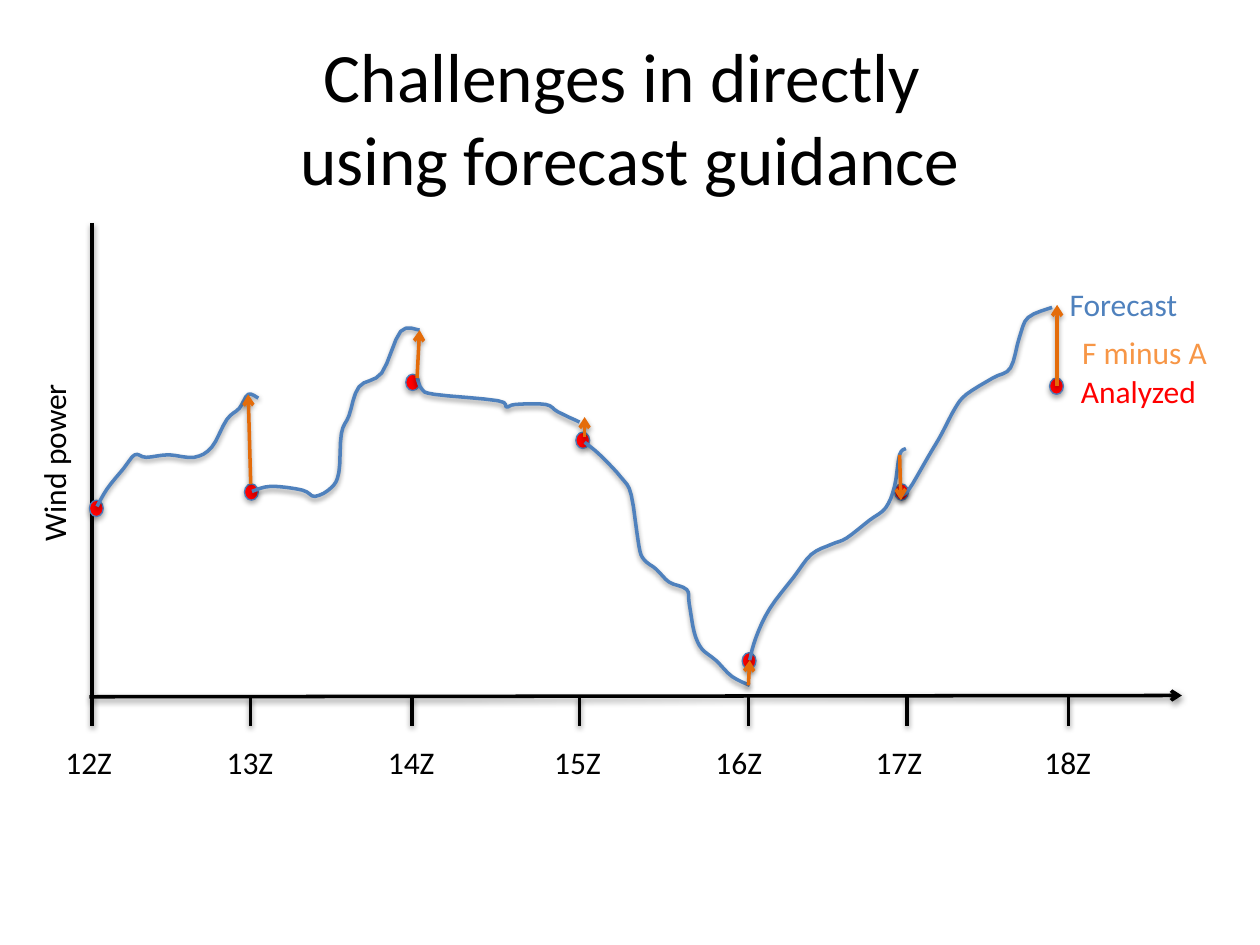
from collections import namedtuple
from dataclasses import dataclass

from lxml import etree
from pptx import Presentation
from pptx import oxml
from pptx.dml.color import RGBColor
from pptx.enum import shapes, text
from pptx.oxml import ns
from pptx.util import Inches, Pt

Box = namedtuple("Box", "left top width height")


@dataclass(frozen=True)
class Theme:
    """Colours, fonts and sizes of the slide."""
    font: str = "Calibri"
    ink: str = "000000"
    forecast: str = "4F81BD"
    analyzed: str = "FF0000"
    dot_edge: str = "4B7EBC"
    arrow: str = "E46C0A"
    difference: str = "F79646"
    title_size: float = 39.6
    label_size: float = 18
    line_width: float = 2
    dot_line_width: float = 0.75


THEME = Theme()

TICKS = [0.73, 1.99, 3.27, 4.6, 5.94, 7.2, 8.48]
HOUR_LEFTS = [0.42, 1.7, 2.98, 4.3, 5.58, 6.85, 8.19]

ANALYSES = [(0.71, 2.97), (1.94, 2.84), (3.22, 1.97), (4.57, 2.43),
            (5.89, 4.18), (8.33, 2), (7.1, 2.84)]

DIFFERENCES = [(1.99, 2.84, 1.97, 2.13), (3.31, 2, 3.33, 1.62), (4.64, 2.47, 4.64, 2.31),
               (8.39, 2.06, 8.39, 1.42), (7.14, 2.61, 7.15, 2.97), (5.94, 4.44, 5.95, 4.24)]

LEGEND = [("Analyzed", THEME.analyzed, Box(8.48, 1.9, 1.13, 0.4)),
          ("Forecast", THEME.forecast, Box(8.39, 1.21, 1.08, 0.4)),
          ("F minus A", THEME.difference, Box(8.49, 1.59, 1.22, 0.4))]

FORECASTS = [
    [(77, 302), (85, 288), (98, 272), (107, 261), (116, 263), (134, 261), (154, 263),
     (168, 255), (180, 233), (190, 224), (197, 213), (205, 216)],
    [(200, 290), (215, 286), (240, 289), (250, 294), (263, 287), (269, 275), (271, 244),
     (277, 230), (285, 207), (303, 196), (318, 163), (333, 162)],
    [(331, 200), (335, 209), (345, 213), (395, 218), (402, 223), (409, 221), (433, 221),
     (443, 227), (460, 235)],
    [(464, 251), (476, 261), (493, 279), (501, 293), (507, 333), (511, 344), (521, 352),
     (531, 362), (545, 368), (547, 379), (551, 402), (557, 415), (568, 424), (581, 437),
     (595, 444)],
    [(595, 424), (600, 406), (611, 383), (630, 358), (644, 340), (660, 332), (672, 327),
     (690, 313), (703, 303), (710, 286), (714, 261), (719, 256)],
    [(713, 294), (721, 289), (737, 262), (747, 245), (758, 224), (767, 213), (788, 200),
     (802, 192), (809, 168), (816, 152), (835, 144)],
]


def style_line(part, color, width, arrow=False, shade=38):
    """Colour an outline, add its soft shadow and, if asked, an arrowhead."""
    part.line.color.rgb = RGBColor.from_string(color)
    part.line.width = Pt(width)
    if arrow:
        outline = part._element.spPr.find(ns.qn("a:ln"))
        etree.SubElement(outline, ns.qn("a:tailEnd"), type="arrow")
    effects = oxml.parse_xml(
        f'<a:effectLst {ns.nsdecls("a")}><a:outerShdw blurRad="{Pt(3.1)}" dist="{Pt(1.6)}" '
        f'dir="5400000" rotWithShape="0"><a:srgbClr val="{THEME.ink}">'
        f'<a:alpha val="{shade * 1000}"/></a:srgbClr></a:outerShdw></a:effectLst>')
    part._element.spPr.append(effects)


def add_line(slide, box, ends, color, arrow=False):
    """Draw a straight line between two points of the box."""
    x1, y1, x2, y2 = ends
    line = slide.shapes.add_connector(
        shapes.MSO_CONNECTOR.STRAIGHT, Inches(box.left + x1), Inches(box.top + y1),
        Inches(box.left + x2), Inches(box.top + y2))
    style_line(line, color, THEME.line_width, arrow)


def format_runs(frame, size, color):
    """Give every run of a text frame its font, size and colour."""
    for paragraph in frame.paragraphs:
        for run in paragraph.runs:
            run.font.name = THEME.font
            run.font.size = Pt(size)
            run.font.color.rgb = RGBColor.from_string(color)


def add_label(slide, box, place, wording, color=THEME.ink, rotation=0):
    """Write a one-line label at a place inside the box."""
    label = slide.shapes.add_textbox(
        Inches(box.left + place.left), Inches(box.top + place.top),
        Inches(place.width), Inches(place.height))
    label.rotation = rotation
    label.text_frame.word_wrap = False
    label.text_frame.auto_size = text.MSO_AUTO_SIZE.SHAPE_TO_FIT_TEXT
    label.text_frame.text = wording
    format_runs(label.text_frame, THEME.label_size, color)


def add_title(slide, box, wording):
    """Fill and place the title."""
    title = slide.shapes.title
    title.left, title.top, title.width, title.height = map(Inches, box)
    frame = title.text_frame
    frame.text = wording
    frame.auto_size = text.MSO_AUTO_SIZE.NONE
    frame.vertical_anchor = text.MSO_ANCHOR.MIDDLE
    frame.paragraphs[0].alignment = text.PP_ALIGN.CENTER
    format_runs(frame, THEME.title_size, THEME.ink)


def add_axes(slide, box):
    """Draw both axes with the hour ticks and their labels."""
    base, tick_end = 4.53, 4.76
    add_line(slide, box, (0.71, base, 9.38, base - 0.01), THEME.ink, arrow=True)
    for index, (x, label_left) in enumerate(zip(TICKS, HOUR_LEFTS)):
        start = base if index else 0.77
        add_line(slide, box, (x, start, x, tick_end), THEME.ink)
        add_label(slide, box, Box(label_left, 4.85, 0.58, 0.4), f"{12 + index}Z")
    add_label(slide, box, Box(-0.31, 2.46, 1.47, 0.4), "Wind power", rotation=270)


def add_analyses(slide, box):
    """Mark the analyzed values with dots."""
    for x, y in ANALYSES:
        dot = slide.shapes.add_shape(
            shapes.MSO_SHAPE.OVAL, Inches(box.left + x), Inches(box.top + y),
            Inches(0.11), Inches(0.13))
        dot.fill.solid()
        dot.fill.fore_color.rgb = RGBColor.from_string(THEME.analyzed)
        style_line(dot, THEME.dot_edge, THEME.dot_line_width, shade=35)


def smooth(points, steps=4):
    """Return points of a Catmull-Rom curve through the given ones."""
    padded = [points[0], *points, points[-1]]
    curve = [points[0]]
    for before, start, end, after in zip(padded, padded[1:], padded[2:], padded[3:]):
        for step in range(1, steps + 1):
            t = step / steps
            curve.append(tuple(
                b + t / 2 * (c - a + t * (2 * a - 5 * b + 4 * c - d + t * (3 * (b - c) + d - a)))
                for a, b, c, d in zip(before, start, end, after)))
    return curve


def add_forecasts(slide, box):
    """Draw the forecast curves, given in hundredths of an inch."""
    fine = 10
    for points in FORECASTS:
        start, *rest = [(x * fine, y * fine) for x, y in smooth(points)]
        builder = slide.shapes.build_freeform(*start, scale=Inches(0.01) / fine)
        builder.add_line_segments(rest, close=False)
        curve = builder.convert_to_shape(Inches(box.left), Inches(box.top))
        curve.fill.background()
        style_line(curve, THEME.forecast, THEME.line_width)


def add_wind_chart(slide, box):
    """Build the wind power sketch with its legend."""
    add_axes(slide, box)
    add_analyses(slide, box)
    add_forecasts(slide, box)
    for ends in DIFFERENCES:
        add_line(slide, box, ends, THEME.arrow, arrow=True)
    for wording, color, place in LEGEND:
        add_label(slide, box, place, wording, color)


def main():
    """Build and save the slide."""
    deck = Presentation()
    deck.slide_width, deck.slide_height = Inches(10), Inches(7.5)
    slide = deck.slides.add_slide(deck.slide_layouts[5])
    add_title(slide, Box(0.5, 0.3, 9, 1.25), "Challenges in directly \vusing forecast guidance")
    add_wind_chart(slide, Box(0, 1, 10, 5.5))
    deck.save("out.pptx")


if __name__ == "__main__":
    main()
